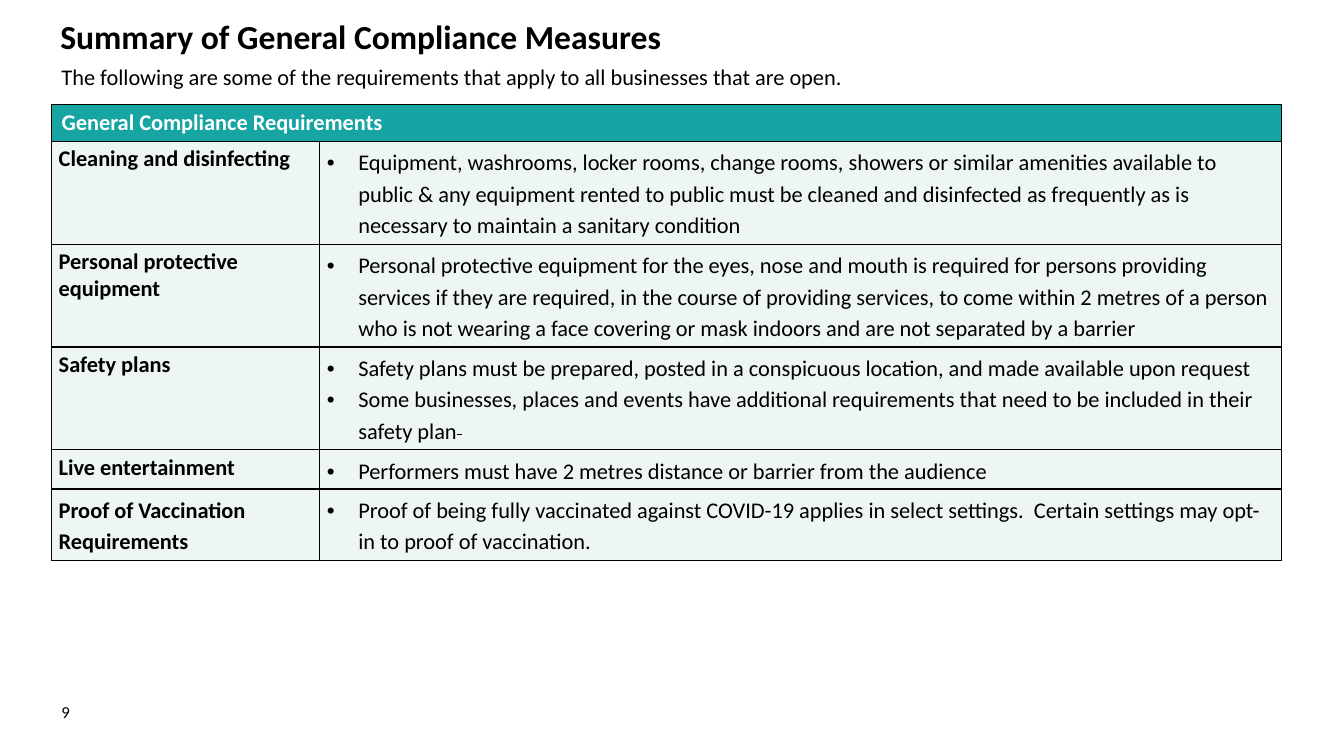
from dataclasses import dataclass

from lxml.etree import SubElement
from pptx import Presentation
from pptx.dml.color import RGBColor as RGB
from pptx.enum.text import MSO_ANCHOR as Anchor
from pptx.oxml.ns import qn
from pptx.util import Cm, Pt


@dataclass(frozen=True)
class Theme:
    font: str = "Calibri"
    ink: str = "000000"
    header_ink: str = "FFFFFF"
    header_fill: str = "16A5A3"
    row_fill: str = "EEF5F5"
    title: int = 24
    body: int = 16
    footer: int = 12
    bullet_indent: float = 0.79
    bullet_spacing: float = 1.15


THEME = Theme()

# Each entry: heading, heading line spacing, row height in cm, bullets
REQUIREMENTS = [
    ("Cleaning and disinfecting", None, 2.59, [
        "Equipment, washrooms, locker rooms, change rooms, showers or similar amenities "
        "available to public & any equipment rented to public must be cleaned and "
        "disinfected as frequently as is necessary to maintain a sanitary condition"]),
    ("Personal protective equipment", None, 2.59, [
        "Personal protective equipment for the eyes, nose and mouth is required for persons "
        "providing services if they are required, in the course of providing services, to "
        "come within 2 metres of a person who is not wearing a face covering or mask indoors "
        "and are not separated by a barrier"]),
    ("Safety plans", None, 2.59, [
        "Safety plans must be prepared, posted in a conspicuous location, and made available "
        "upon request",
        "Some businesses, places and events have additional requirements that need to be "
        "included in their safety plan"]),
    ("Live entertainment", None, 0.99, [
        "Performers must have 2 metres distance or barrier from the audience"]),
    ("Proof of Vaccination Requirements", 1.15, 1.8, [
        "Proof of being fully vaccinated against COVID-19 applies in select settings.  "
        "Certain settings may opt-in to proof of vaccination."]),
]
STRUCK_ENDING = "safety plan"


def write(paragraph, text, size=THEME.body, color=THEME.ink, bold=False,
          spacing=None, bullet=False, strike=False):
    """Add one formatted run to a paragraph."""
    if bullet:
        props = paragraph._p.get_or_add_pPr()
        indent = Cm(THEME.bullet_indent)
        props.set("marL", str(indent))
        props.set("indent", str(-indent))
        SubElement(props, qn("a:buFont")).set("typeface", "Arial")
        SubElement(props, qn("a:buChar")).set("char", "•")
    if spacing:
        paragraph.line_spacing = spacing
    run = paragraph.add_run()
    run.text = text
    font = run.font
    font.name, font.size, font.bold = THEME.font, Pt(size), bold
    font.color.rgb = RGB.from_string(color)
    if strike:
        run._r.get_or_add_rPr().set("strike", "sngStrike")


class SlideBuilder:
    def __init__(self, slide, theme):
        self.slide = slide
        self.theme = theme

    def text(self, words, left, top, width, height, anchor=Anchor.TOP, **style):
        frame = self.slide.shapes.add_textbox(
            Cm(left), Cm(top), Cm(width), Cm(height)).text_frame
        frame.word_wrap = True
        frame.vertical_anchor = anchor
        write(frame.paragraphs[0], words, **style)

    def table(self, left, top, widths, heights):
        grid = self.slide.shapes.add_table(
            len(heights), len(widths), Cm(left), Cm(top),
            Cm(sum(widths)), Cm(sum(heights))).table
        grid.horz_banding = False
        for column, width in zip(grid.columns, widths):
            column.width = Cm(width)
        for row, height in zip(grid.rows, heights):
            row.height = Cm(height)
        return grid

    def cell(self, cell, fill, inset=None):
        """Outline and fill a cell, and return its first paragraph."""
        props = cell._tc.get_or_add_tcPr()
        for side in ("lnL", "lnR", "lnT", "lnB"):
            line = SubElement(props, qn(f"a:{side}"), w=str(Pt(1)))
            solid = SubElement(line, qn("a:solidFill"))
            SubElement(solid, qn("a:srgbClr")).set("val", self.theme.ink)
        cell.fill.solid()
        cell.fill.fore_color.rgb = RGB.from_string(fill)
        if inset:
            cell.margin_left = cell.margin_right = Cm(inset[0])
            cell.margin_top = cell.margin_bottom = Cm(inset[1])
        return cell.text_frame.paragraphs[0]

    def requirements(self, title, entries, left, top, widths, header_height):
        theme = self.theme
        grid = self.table(left, top, widths,
                          [header_height] + [height for _, _, height, _ in entries])

        # Header across both columns
        grid.cell(0, 0).merge(grid.cell(0, 1))
        self.cell(grid.cell(0, 1), theme.header_fill)
        write(self.cell(grid.cell(0, 0), theme.header_fill), title,
              color=theme.header_ink, bold=True)

        # One row per requirement
        inset = (0.18, 0.1)
        for row, (heading, spacing, _, bullets) in enumerate(entries, start=1):
            write(self.cell(grid.cell(row, 0), theme.row_fill, inset), heading,
                  bold=True, spacing=spacing)
            details = grid.cell(row, 1)
            paragraph = self.cell(details, theme.row_fill, inset)
            for number, bullet in enumerate(bullets):
                if number:
                    paragraph = details.text_frame.add_paragraph()
                write(paragraph, bullet, bullet=True, spacing=theme.bullet_spacing)
                if bullet.endswith(STRUCK_ENDING):
                    write(paragraph, " ", strike=True)


def main():
    deck = Presentation()
    deck.slide_width, deck.slide_height = Cm(33.87), Cm(19.05)
    page = SlideBuilder(deck.slides.add_slide(deck.slide_layouts[6]), THEME)

    # Title and introduction
    page.text("Summary of General Compliance Measures", 1.27, 0.38, 32.05, 1.42,
              size=THEME.title, bold=True, spacing=0.9)
    page.text("The following are some of the requirements that apply to all businesses "
              "that are open.", 1.3, 1.47, 31.32, 1.07)

    # Requirements table
    page.requirements("General Compliance Requirements", REQUIREMENTS,
                      left=1.3, top=2.63, widths=(6.76, 24.23), header_height=0.93)

    # Page number
    page.text("9", 1.3, 17.42, 1.42, 1.02, anchor=Anchor.MIDDLE, size=THEME.footer)

    deck.save("out.pptx")


if __name__ == "__main__":
    main()
